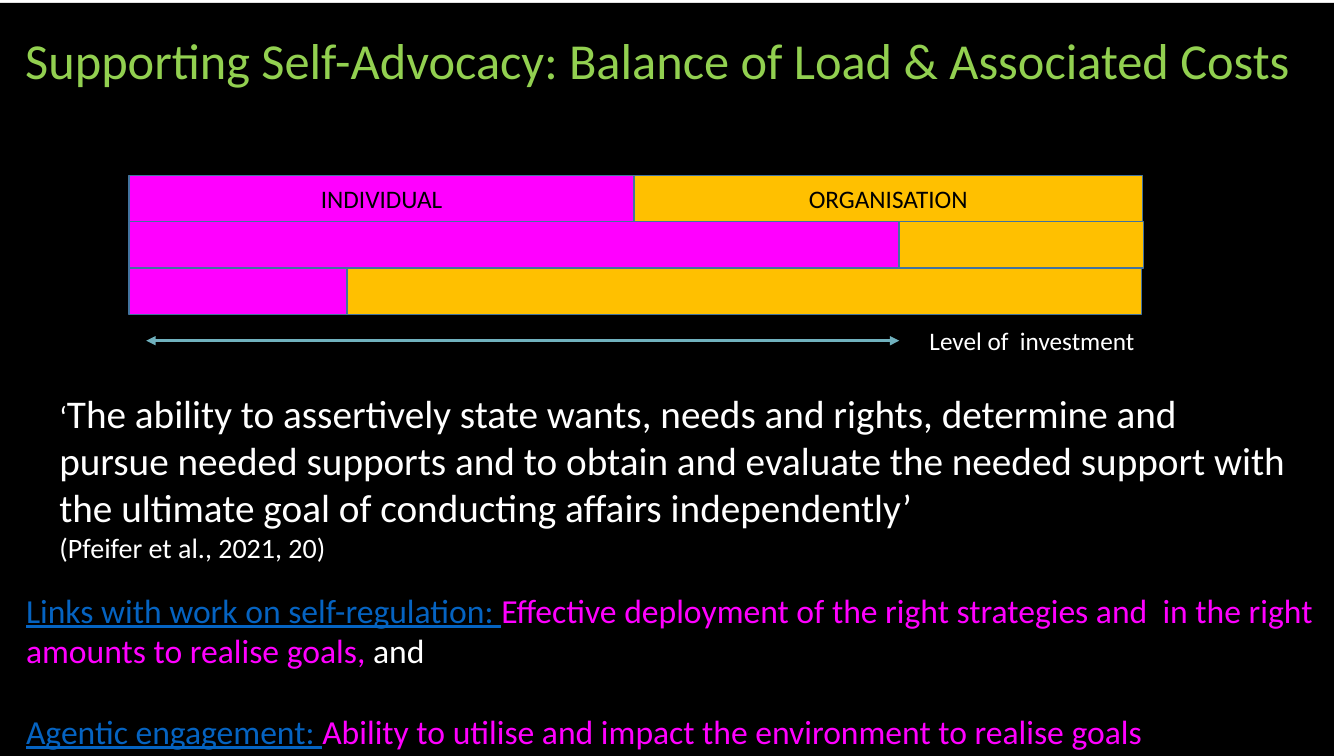
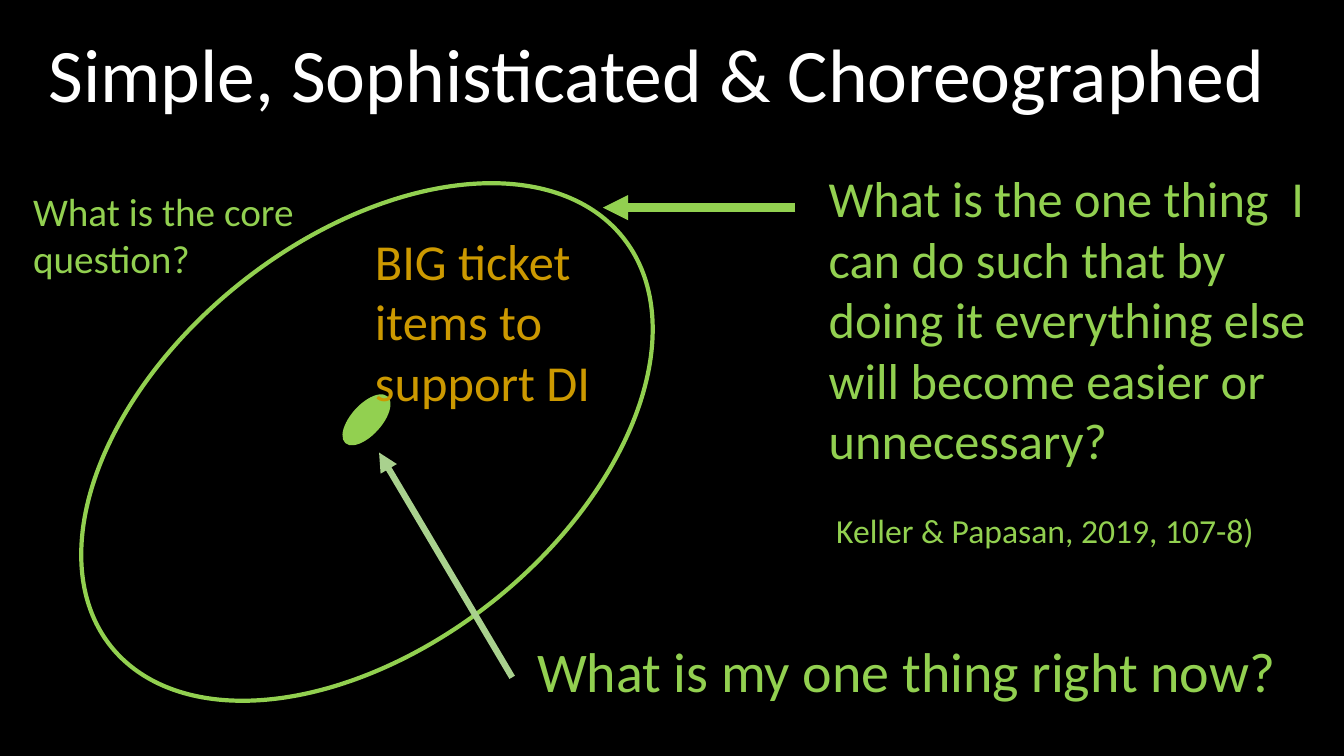
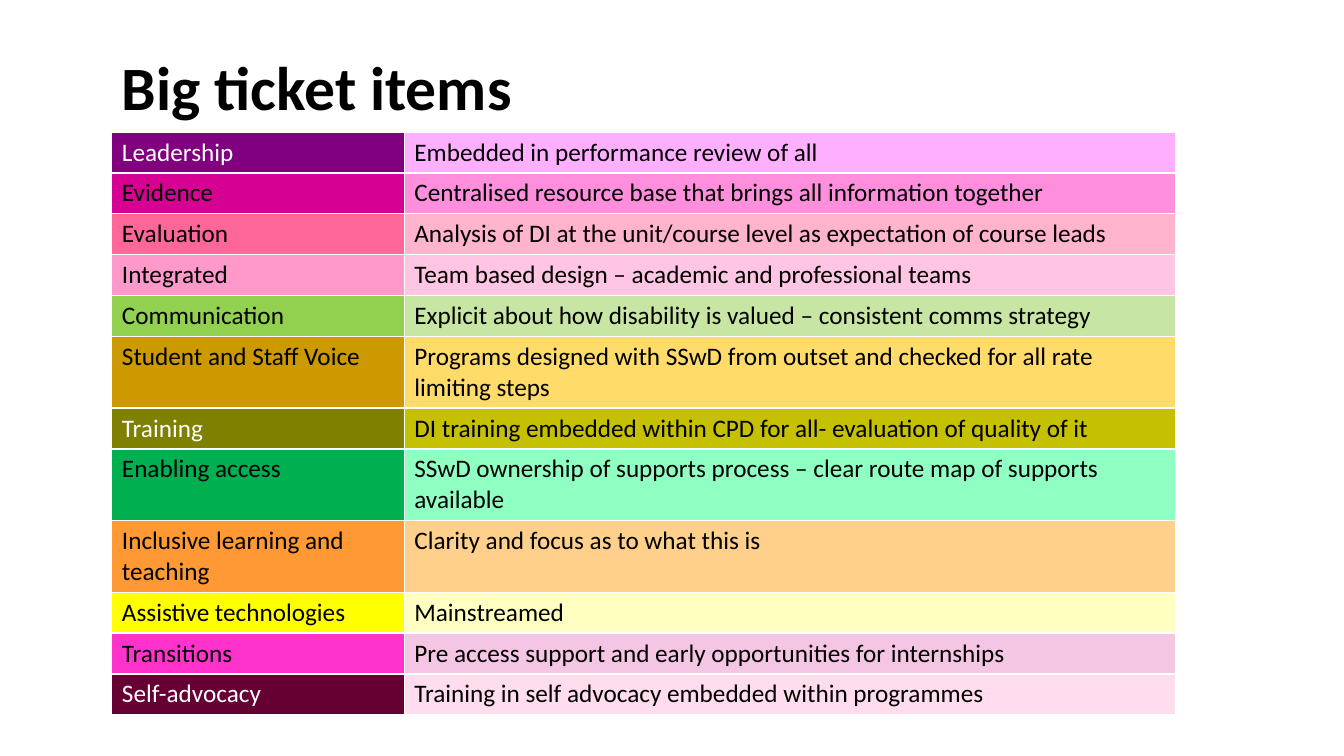
from pptx import Presentation
from pptx.dml.color import RGBColor
from pptx.enum.shapes import MSO_CONNECTOR, MSO_SHAPE
from pptx.enum.text import MSO_ANCHOR, MSO_AUTO_SIZE, PP_ALIGN
from pptx.oxml.ns import qn
from pptx.util import Inches, Pt
from lxml.etree import SubElement

HUES = {"black": "000000", "white": "FFFFFF", "green": "92D050",
        "pink": "FF00FF", "amber": "FFC000", "edge": "43739E",
        "link": "0563C1", "teal": "70B1BE", "sage": "A9D18E",
        "gold": "CC9900"}


def tint(name):
    return RGBColor.from_string(HUES.get(name, name))


def write(frame, paras, **look):
    """Fill a text frame; each paragraph is a list of (text, size, hue) runs."""
    layout = {"word_wrap": True, "auto_size": MSO_AUTO_SIZE.NONE, **look}
    for key, value in layout.items():
        setattr(frame, key, value)
    for num, runs in enumerate(paras):
        para = frame.add_paragraph() if num else frame.paragraphs[0]
        para.alignment = PP_ALIGN.LEFT
        for text, size, hue in runs:
            run = para.add_run()
            run.text = text
            style = {"name": "Calibri", "size": Pt(size), "bold": False,
                     "underline": hue == "link"}
            for key, value in style.items():
                setattr(run.font, key, value)
            run.font.color.rgb = tint(hue)


deck = Presentation()
deck.slide_width, deck.slide_height = Inches(13.33), Inches(7.5)

# Black slides with a title
heads = [
    ("Supporting Self-Advocacy: Balance of Load & Associated Costs", 36,
     "green", (0.15, 0.23, 12.85, 0.71), (0, 0.03, 13.23, 7.47)),
    ("Simple, Sophisticated & Choreographed", 54,
     "white", (0.38, 0.21, 12.57, 1.01), (0, 0, 13.33, 7.5)),
]
dark = []
for text, size, hue, place, area in heads:
    slide = deck.slides.add_slide(deck.slide_layouts[5])
    title = slide.shapes.title
    for side, value in zip(("left", "top", "width", "height"), place):
        setattr(title, side, Inches(value))
    write(title.text_frame, [[(text, size, hue)]],
          vertical_anchor=MSO_ANCHOR.MIDDLE)
    back = slide.shapes.add_shape(MSO_SHAPE.RECTANGLE, *map(Inches, area))
    back.shadow.inherit = False
    back.fill.solid()
    back.fill.fore_color.rgb = tint("black")
    back.line.fill.background()
    title.element.addprevious(back.element)
    dark.append(slide)
load, focus = dark

# Balance bars: left, row, width, fill, label
start, step = 1.74, 0.46
bars = [
    (1.28, 0, 5.01, "pink", "INDIVIDUAL"),
    (6.29, 0, 5.04, "amber", "ORGANISATION"),
    (1.28, 1, 7.63, "pink", ""),
    (1.28, 2, 2.16, "pink", ""),
    (8.92, 1, 2.42, "amber", ""),
    (3.44, 2, 7.88, "amber", ""),
]
for left, row, width, hue, label in bars:
    bar = load.shapes.add_shape(
        MSO_SHAPE.RECTANGLE, Inches(left), Inches(start + row * step),
        Inches(width), Inches(step))
    bar.shadow.inherit = False
    bar.fill.solid()
    bar.fill.fore_color.rgb = tint(hue)
    bar.line.color.rgb = tint("edge")
    bar.line.width = Pt(1)
    if label:
        write(bar.text_frame, [[(label, 18, "black")]],
              vertical_anchor=MSO_ANCHOR.MIDDLE)
        bar.text_frame.paragraphs[0].alignment = PP_ALIGN.CENTER

# Large ring and its core
ovals = [
    (MSO_SHAPE.ARC, (0.39, 2.37, 6.5, 4.03), 321.4, 3),
    (MSO_SHAPE.OVAL, (3.49, 3.86, 0.29, 0.61), 42.2, 1),
]
for kind, place, turn, weight in ovals:
    oval = focus.shapes.add_shape(kind, *map(Inches, place))
    oval.shadow.inherit = False
    oval.rotation = turn
    oval.line.color.rgb = tint("green")
    oval.line.width = Pt(weight)
    if kind == MSO_SHAPE.ARC:
        oval.fill.background()
        oval.adjustments[0], oval.adjustments[1] = 55.43, 55.4
    else:
        oval.fill.solid()
        oval.fill.fore_color.rgb = tint("green")

# Arrows: slide, ends, hue, weight, arrowheads
arrows = [
    (load, (1.45, 3.38, 8.92, 3.38), "teal", 2.25, ("headEnd", "tailEnd")),
    (focus, (7.89, 2.06, 5.98, 2.06), "green", 6, ("tailEnd",)),
    (focus, (5.08, 6.72, 3.76, 4.49), "sage", 4.5, ("tailEnd",)),
]
for slide, ends, hue, weight, tips in arrows:
    arrow = slide.shapes.add_connector(
        MSO_CONNECTOR.STRAIGHT, *map(Inches, ends))
    arrow.line.color.rgb = tint(hue)
    arrow.line.width = Pt(weight)
    for tip in tips:
        SubElement(arrow.line._ln, qn("a:" + tip), type="triangle")
    SubElement(arrow.element.spPr, qn("a:effectLst"))

# Text boxes: slide, place, gap before later paragraphs, paragraphs
notes = [
    (load, (9.12, 3.18, 3.51, 0.4), 0,
     [[("Level of  investment", 18, "white")]]),
    (load, (0.49, 3.81, 12.36, 1.85), 0,
     [[("‘", 22, "white"),
       ("The ability to assertively state wants, needs and rights, determine "
        "and pursue needed supports and to obtain and evaluate the needed "
        "support with the ultimate goal of conducting affairs independently’",
        28, "white")],
      [("(Pfeifer et al., 2021, 20)", 20, "white")]]),
    (load, (0.16, 5.8, 13.17, 1.7), 29,
     [[("Links with work on self-regulation: ", 24, "link"),
       ("Effective deployment of the right strategies and  in the right "
        "amounts to realise goals, ", 24, "pink"),
       ("and", 24, "white")],
      [("Agentic engagement: ", 24, "link"),
       ("Ability to utilise and impact the environment to realise goals",
        24, "pink")]]),
    (focus, (8.12, 1.61, 4.99, 3.94), 29,
     [[("What is the one thing  I can do such that by doing it everything "
        "else will become easier or unnecessary?", 36, "green")],
      [(" Keller & Papasan, 2019, 107-8)", 24, "green")]]),
    (focus, (5.23, 6.27, 7.87, 0.77), 0,
     [[("What is my one thing right now?", 40, "green")]]),
    (focus, (0.23, 1.81, 2.97, 1.04), 0,
     [[("What is the core question?", 28, "green")]]),
    (focus, (3.62, 2.23, 2.92, 1.92), 0,
     [[("BIG ticket items to support DI", 36, "gold")]]),
]
for slide, place, gap, paras in notes:
    box = slide.shapes.add_textbox(*map(Inches, place))
    write(box.text_frame, paras)
    for para in box.text_frame.paragraphs[1:]:
        para.space_before = Pt(gap)

# Table of items: name, its fill, action, its fill
items = [
    ("Leadership", "800080", "Embedded in performance review of all",
     "FFAFFF"),
    ("Evidence", "D60093",
     "Centralised resource base that brings all information together",
     "FF8FDC"),
    ("Evaluation", "FF6699",
     "Analysis of DI at the unit/course level as expectation of course leads",
     "FFB3CC"),
    ("Integrated", "FF99CC",
     "Team based design – academic and professional teams", "FFC5E2"),
    ("Communication", "green",
     "Explicit about how disability is valued – consistent comms strategy",
     "C7E6A4"),
    ("Student and Staff Voice", "gold",
     "Programs designed with SSwD from outset and checked for all rate "
     "limiting steps", "FFDB69"),
    ("Training", "808000",
     "DI training embedded within CPD for all- evaluation of quality of it",
     "C5C000"),
    ("Enabling access", "00B050",
     "SSwD ownership of supports process – clear route map of supports "
     "available", "8FFFC2"),
    ("Inclusive learning and teaching", "FF9933",
     "Clarity and focus as to what this is", "FFD08B"),
    ("Assistive technologies", "FFFF00", "Mainstreamed", "FFFFC1"),
    ("Transitions", "FF33CC",
     "Pre access support and early opportunities for internships", "F5C5E4"),
    ("Self-advocacy", "660033",
     "Training in self advocacy embedded within programmes", "FFDDEE"),
]
pale = {"Leadership", "Training", "Self-advocacy"}
slide = deck.slides.add_slide(deck.slide_layouts[6])
grid = slide.shapes.add_table(
    len(items) + 1, 2, Inches(1.11), Inches(0.46),
    Inches(10.55), Inches(5.65)).table
grid.horz_banding = False
for col, width in zip(grid.columns, (2.9, 7.65)):
    col.width = Inches(width)
for row in grid.rows:
    row.height = Inches(0.4)
grid.rows[0].height = Inches(0.85)

head = grid.cell(0, 0)
head.merge(grid.cell(0, 1))
head.fill.solid()
head.fill.fore_color.rgb = tint("white")
write(head.text_frame, [[("Big ticket items", 44, "black")]])
head.text_frame.paragraphs[0].runs[0].font.bold = True

for num, (name, deep, action, light) in enumerate(items, 1):
    for col, (text, fill) in enumerate(((name, deep), (action, light))):
        cell = grid.cell(num, col)
        cell.fill.solid()
        cell.fill.fore_color.rgb = tint(fill)
        hue = "white" if text in pale else "black"
        write(cell.text_frame, [[(text, 18, hue)]])

deck.save("out.pptx")
